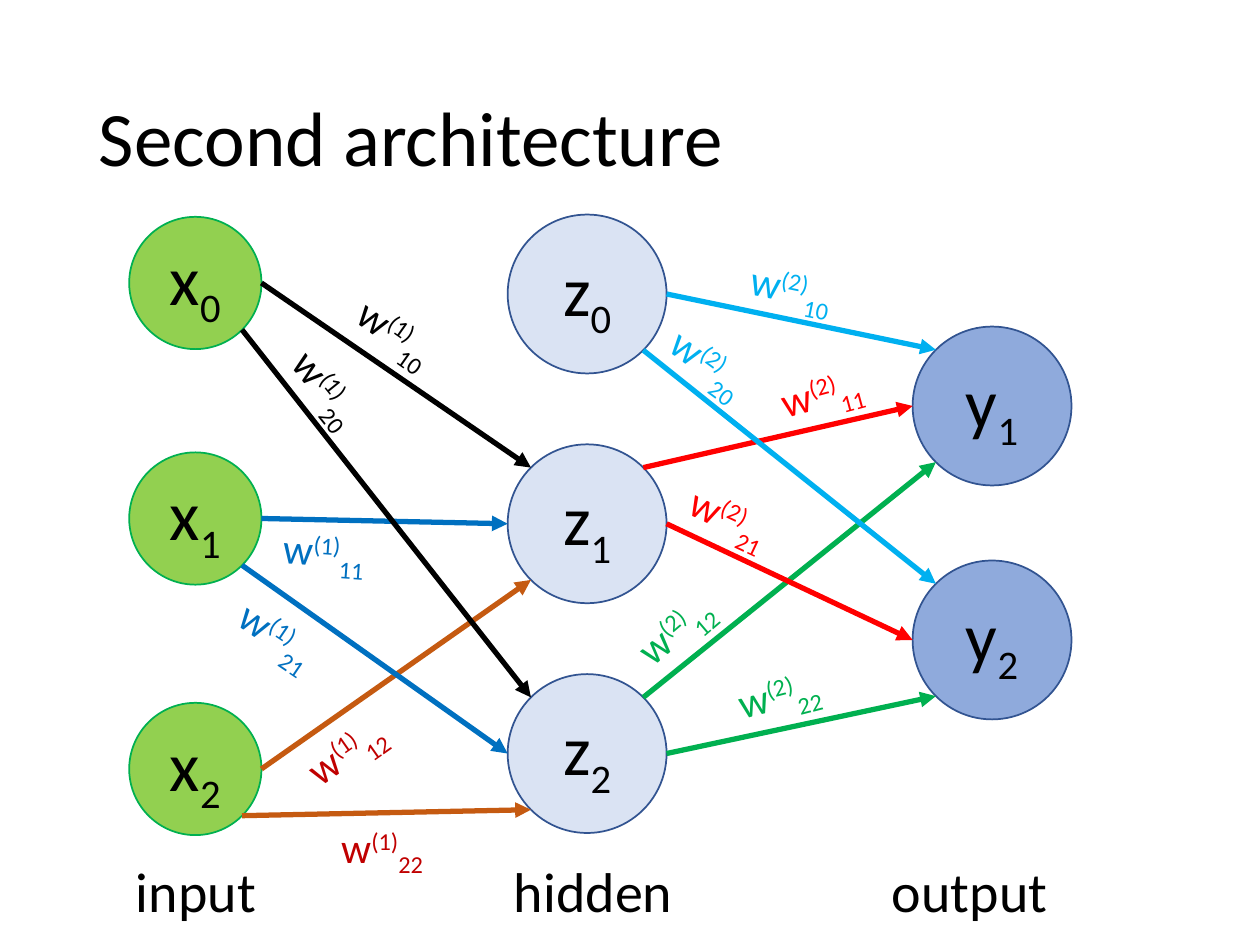
from math import cos, radians, sin

from lxml.etree import SubElement
from pptx import Presentation
from pptx.dml.color import RGBColor
from pptx.enum.shapes import MSO_CONNECTOR as Connector, MSO_SHAPE as Preset
from pptx.enum.text import MSO_ANCHOR as Anchor, PP_ALIGN as Align
from pptx.oxml.ns import qn
from pptx.util import Pt

TITLE = "Second architecture"
LAYER_NAMES = ("input", "hidden", "output")
LAYER_PITCH = 216  # distance between the layer names

# Layer letter: centre x, diameter, {unit index: centre y}
LAYERS = {
    "x": (111.6, 75.6, {0: 161.7, 1: 296.3, 2: 439.4}),
    "z": (335.5, 90.8, {0: 168, 1: 299.3, 2: 430.6}),
    "y": (566.9, 90.8, {1: 232, 2: 365.7}),
}

# Source, target, exit site, entry site, label (left, top, rotation)
EDGES = [
    ("x0", "z1", "right", "top left", (195.8, 172.8, 35.1)),
    ("x1", "z1", "right", "left", (154.8, 296.6, 4.1)),
    ("x2", "z1", "right", "bottom left", (165.6, 409, -35.1)),
    ("z1", "y1", "top right", "left", (438.5, 205.2, -15.1)),
    ("z0", "y1", "right", "top left", (421.9, 146.2, 11.4)),
    ("z2", "y2", "right", "bottom left", (414, 377.3, -14.4)),
    ("z2", "y1", "top right", "bottom left", (353.5, 339.1, -40.3)),
    ("z1", "y2", "right", "left", (386.6, 277.9, 25.4)),
    ("z0", "y2", "bottom right", "top left", (374.4, 190.1, 36.3)),
    ("x0", "z2", "bottom right", "top left", (156.2, 205.2, 51.2)),
    ("x1", "z2", "bottom right", "left", (128.2, 345.6, 34)),
    ("x2", "z2", "bottom right", "bottom left", (187.9, 465.8, 0)),
]

# Ellipse connection site: (site index, clockwise angle from the right)
SITES = {
    "top left": (1, 225),
    "left": (2, 180),
    "bottom left": (3, 135),
    "bottom right": (5, 45),
    "right": (6, 0),
    "top right": (7, 315),
}

THEME = {
    "font": "Calibri",
    "text": "000000",
    "size": {"title": 44, "node": 40, "layer": 32, "weight": 24},
    "node": {  # fill, outline
        "x": ("92D050", "00B050"),
        "z": ("DAE3F3", "325491"),
        "y": ("8FAADC", "325491"),
    },
    "edge": {  # arrow, label
        "x0": ("000000", "000000"),
        "x1": ("0070C0", "0070C0"),
        "x2": ("C55A11", "C00000"),
        "z0": ("00B0F0", "00B0F0"),
        "z1": ("FF0000", "FF0000"),
        "z2": ("00B050", "00B050"),
    },
    "outline": 1,
    "arrow": 3,
}
SUPERSCRIPT, SUBSCRIPT = 30000, -25000
LABEL_SIZE = (66.2, 36)


def color(value):
    return RGBColor.from_string(value)


def write(shape, runs, role, text_color=THEME["text"], **frame_format):
    """Fill the first paragraph with (text, baseline) runs and return it."""
    frame = shape.text_frame
    for name, value in frame_format.items():
        setattr(frame, name, value)
    paragraph = frame.paragraphs[0]
    for text, baseline in runs:
        run = paragraph.add_run()
        run.text = text
        font_format = {"name": THEME["font"], "size": Pt(THEME["size"][role])}
        for name, value in font_format.items():
            setattr(run.font, name, value)
        run.font.color.rgb = color(text_color)
        if baseline:
            run.font._element.set("baseline", str(baseline))
    return paragraph


def add_text(slide, box, runs, role, text_color=THEME["text"], **frame_format):
    shape = slide.shapes.add_textbox(*map(Pt, box))
    return shape, write(shape, runs, role, text_color, **frame_format)


def add_layer_names(slide):
    """Write the names in one line, aligned by tab stops."""
    _, paragraph = add_text(slide, (70.6, 486, 540.7, 46),
                            [("\t".join(LAYER_NAMES), 0)], "layer", word_wrap=False)
    stops = SubElement(paragraph._p.get_or_add_pPr(), qn("a:tabLst"))
    for column in range(1, len(LAYER_NAMES)):
        SubElement(stops, qn("a:tab"), pos=str(Pt(column * LAYER_PITCH)), algn="l")


def add_node(slide, letter, index, center_x, center_y, diameter):
    box = (center_x - diameter / 2, center_y - diameter / 2, diameter, diameter)
    node = slide.shapes.add_shape(Preset.OVAL, *map(Pt, box))
    node.shadow.inherit = False
    fill, outline = THEME["node"][letter]
    node.fill.solid()
    node.fill.fore_color.rgb = color(fill)
    node.line.color.rgb = color(outline)
    node.line.width = Pt(THEME["outline"])
    paragraph = write(node, [(letter, 0), (str(index), SUBSCRIPT)], "node",
                      vertical_anchor=Anchor.MIDDLE)
    paragraph.alignment = Align.CENTER
    return node


def site_point(node, site):
    angle = radians(SITES[site][1])
    radius = node.width / 2
    return (round(node.left + radius * (1 + cos(angle))),
            round(node.top + radius * (1 + sin(angle))))


def add_arrow(slide, source, target, exit_site, entry_site, line_color):
    """Draw an arrow glued to one site of each node."""
    arrow = slide.shapes.add_connector(
        Connector.STRAIGHT, *site_point(source, exit_site), *site_point(target, entry_site))
    arrow.line.color.rgb = color(line_color)
    arrow.line.width = Pt(THEME["arrow"])
    SubElement(arrow.line._get_or_add_ln(), qn("a:tailEnd"), type="triangle")
    SubElement(arrow._element.spPr, qn("a:effectLst"))
    glue = arrow._element.nvCxnSpPr.cNvCxnSpPr
    ends = (("a:stCxn", source, exit_site), ("a:endCxn", target, entry_site))
    for tag, node, site in ends:
        SubElement(glue, qn(tag), id=str(node.shape_id), idx=str(SITES[site][0]))


def add_weight(slide, source, target, place, text_color):
    left, top, rotation = place
    layer = 1 if source[0] == "x" else 2
    runs = [("w", 0), (f"({layer})", SUPERSCRIPT), (target[1] + source[1], SUBSCRIPT)]
    label, _ = add_text(slide, (left, top, *LABEL_SIZE), runs, "weight",
                        text_color, word_wrap=False)
    label.rotation = rotation


def main():
    presentation = Presentation()
    presentation.slide_width, presentation.slide_height = Pt(720), Pt(540)
    slide = presentation.slides.add_slide(presentation.slide_layouts[6])

    add_layer_names(slide)
    _, title = add_text(slide, (49.5, 28.8, 621, 104.4), [(TITLE, 0)], "title",
                        word_wrap=True, vertical_anchor=Anchor.MIDDLE)
    title.line_spacing = 0.9

    nodes = {}
    for letter, (center_x, diameter, units) in LAYERS.items():
        for index, center_y in units.items():
            nodes[f"{letter}{index}"] = add_node(
                slide, letter, index, center_x, center_y, diameter)

    for source, target, exit_site, entry_site, place in EDGES:
        line_color, label_color = THEME["edge"][source]
        add_arrow(slide, nodes[source], nodes[target], exit_site, entry_site, line_color)
        add_weight(slide, source, target, place, label_color)

    presentation.save("out.pptx")


if __name__ == "__main__":
    main()
